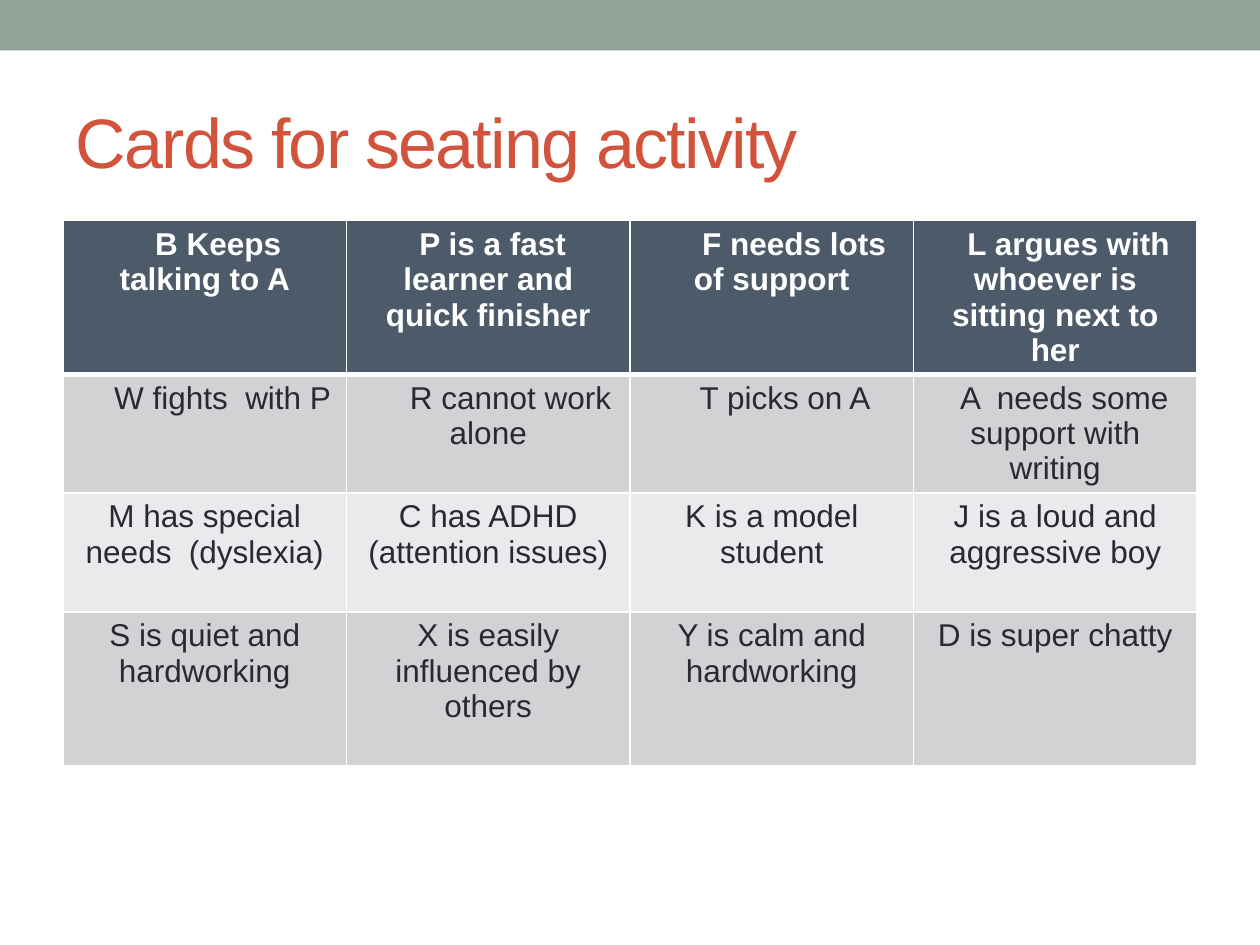
from lxml import etree
from pptx import Presentation
from pptx.dml.color import RGBColor
from pptx.enum.shapes import MSO_SHAPE
from pptx.enum.text import MSO_ANCHOR, PP_ALIGN
from pptx.oxml.ns import qn
from pptx.util import Cm, Pt

RECTANGLE = MSO_SHAPE.RECTANGLE
MIDDLE = MSO_ANCHOR.MIDDLE
LEFT, CENTER = PP_ALIGN.LEFT, PP_ALIGN.CENTER

SAGE = RGBColor(0x93, 0xA2, 0x99)
RUST = RGBColor(0xD2, 0x53, 0x3C)
SLATE = RGBColor(0x4C, 0x5A, 0x6A)
DARK_BAND = RGBColor(0xD0, 0xD2, 0xD4)
LIGHT_BAND = RGBColor(0xE9, 0xEA, 0xEB)
INK = RGBColor(0x29, 0x29, 0x34)
WHITE = RGBColor(0xFF, 0xFF, 0xFF)

FONT = "Arial"
TITLE_ONLY = 5
COLUMN_WIDTH = 5.715
ROW_HEIGHTS = [3.09, 2.37, 2.4, 3.09]
INDENT_STEP = 0.18  # width of one character space at 18 pt

CARDS = [
    ["B Keeps talking to A", "P is a fast learner and quick finisher",
     "F needs lots of support", "L argues with whoever is sitting next to her"],
    ["W fights  with P", "R cannot work alone",
     "T picks on A", "A  needs some support with writing"],
    ["M has special needs  (dyslexia)", "C has ADHD (attention issues)",
     "K is a model student", "J is a loud and aggressive boy"],
    ["S is quiet and hardworking", "X is easily influenced by others",
     "Y is calm and hardworking", "D is super chatty"],
]
# First-line indents of the cards, in steps
INDENTS = [[3, 1, 5, 3], [4, 5, 3, 2], [0] * 4, [0] * 4]


def add_band(slide, width):
    band = slide.shapes.add_shape(RECTANGLE, 0, 0, width, Cm(1.02))
    band.shadow.inherit = False
    band.fill.solid()
    band.fill.fore_color.rgb = SAGE
    band.line.fill.background()


def set_title(slide, text):
    title = slide.shapes.title
    title.left, title.top = Cm(1.27), Cm(1.47)
    title.width, title.height = Cm(22.86), Cm(2.74)
    frame = title.text_frame
    frame.text = text
    frame.vertical_anchor = MIDDLE
    paragraph = frame.paragraphs[0]
    paragraph.alignment = LEFT
    font = paragraph.runs[0].font
    font.name, font.size = FONT, Pt(40)
    font.color.rgb = RUST
    paragraph.runs[0]._r.get_or_add_rPr().set("spc", "-100")


def set_borders(cell, bottom_width, top_width):
    properties = cell._tc.get_or_add_tcPr()
    widths = {"lnL": 1, "lnR": 1, "lnT": top_width, "lnB": bottom_width}
    for side, width in widths.items():
        line = etree.SubElement(properties, qn(f"a:{side}"), w=str(Pt(width)))
        fill = etree.SubElement(line, qn("a:solidFill"))
        etree.SubElement(fill, qn("a:srgbClr"), val=str(WHITE))


def format_card(cell, text, row, indent_steps):
    is_header = row == 0
    set_borders(cell, 3 if is_header else 1, 3 if row == 1 else 1)
    cell.fill.solid()
    band = DARK_BAND if row % 2 else LIGHT_BAND
    cell.fill.fore_color.rgb = SLATE if is_header else band
    cell.text = text
    paragraph = cell.text_frame.paragraphs[0]
    paragraph.alignment = CENTER
    paragraph.font.name, paragraph.font.size = FONT, Pt(18)
    paragraph.font.bold = is_header
    paragraph.font.color.rgb = WHITE if is_header else INK
    if indent_steps:
        indent = Cm(indent_steps * INDENT_STEP)
        paragraph._p.get_or_add_pPr().set("indent", str(indent))


def add_card_table(slide):
    column_count = len(CARDS[0])
    table = slide.shapes.add_table(
        len(CARDS), column_count, Cm(1.27), Cm(4.45),
        Cm(COLUMN_WIDTH * column_count), Cm(sum(ROW_HEIGHTS))).table
    for row, height in enumerate(ROW_HEIGHTS):
        table.rows[row].height = Cm(height)
        for column, text in enumerate(CARDS[row]):
            format_card(table.cell(row, column), text, row, INDENTS[row][column])


def main():
    presentation = Presentation()
    presentation.slide_width, presentation.slide_height = Cm(25.4), Cm(19.05)
    slide = presentation.slides.add_slide(presentation.slide_layouts[TITLE_ONLY])

    # Top band and title
    add_band(slide, presentation.slide_width)
    set_title(slide, "Cards for seating activity")

    # Seating cards
    add_card_table(slide)

    presentation.save("out.pptx")


if __name__ == "__main__":
    main()
